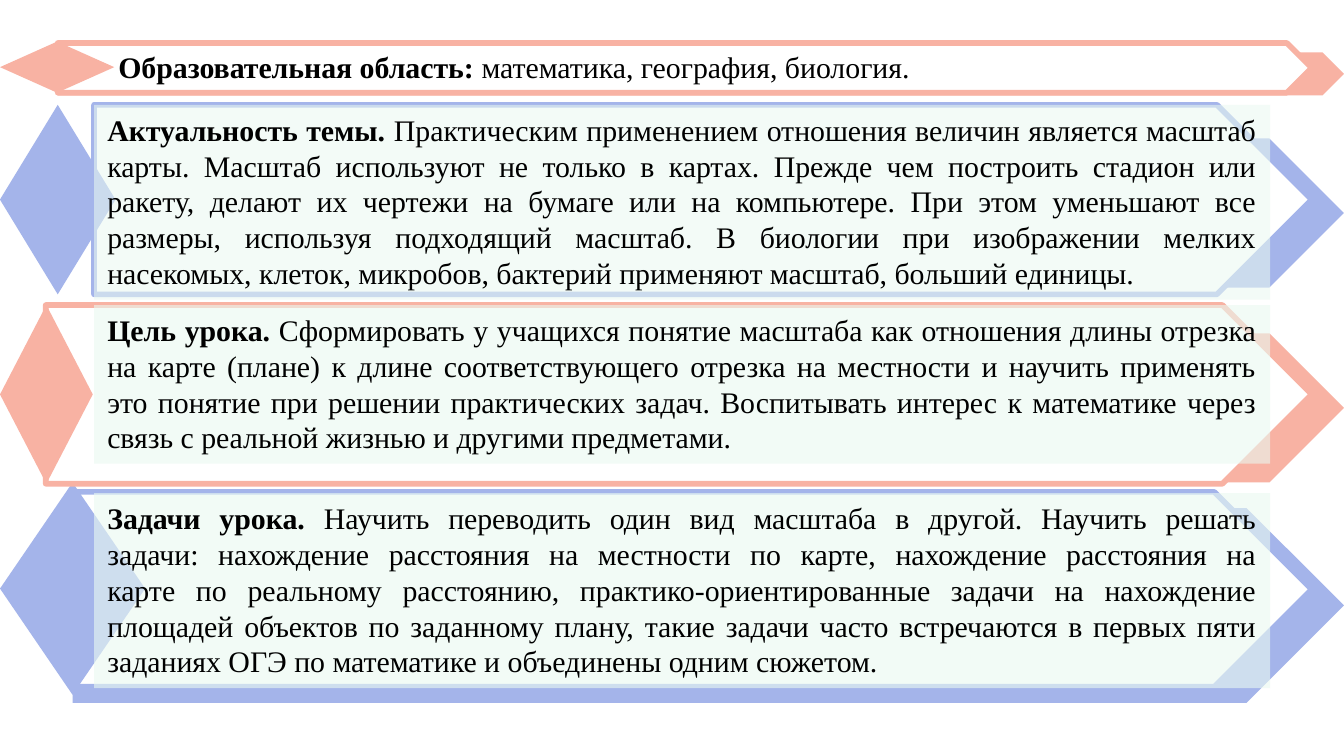
from dataclasses import dataclass

from pptx import Presentation
from pptx import util as u
from pptx.dml.color import RGBColor
from pptx.enum import shapes, text
from pptx.oxml.ns import qn
from lxml import etree

WHITE = RGBColor(0xFF, 0xFF, 0xFF)
BLACK = RGBColor(0x00, 0x00, 0x00)
BLUE = RGBColor(0xA4, 0xB4, 0xEA)
CORAL = RGBColor(0xF8, 0xB2, 0xA3)
MINT = RGBColor(0xEA, 0xF9, 0xF1)

FONT = "Times New Roman"
FONT_SIZE = u.Pt(16)
WIDTH, HEIGHT = u.Inches(10), u.Inches(5.625)
FRONT_TIP = 97.6  # right end of the outlined arrows, % of the width


@dataclass
class Box:
    """A rectangle in percent of the slide's width and height."""
    left: float
    top: float
    width: float
    height: float

    def lengths(self) -> tuple:
        return (int(WIDTH * self.left / 100), int(HEIGHT * self.top / 100),
                int(WIDTH * self.width / 100), int(HEIGHT * self.height / 100))


@dataclass
class Band:
    """A diamond and two arrows; each pair is (top, height) in percent."""
    color: RGBColor
    left: float
    back: tuple
    front: tuple
    diamond_width: float
    diamond: tuple


@dataclass
class Panel:
    top: float
    height: float
    opacity: int
    heading: str
    body: str


BANDS = [
    Band(BLUE, 5.4, (67.2, 25.78), (65.07, 25.78), 10.8, (63.82, 28.09)),
    Band(CORAL, 3.4, (44.09, 19.73), (40.36, 23.64), 6.9, (40.36, 23.64)),
    Band(CORAL, 4.3, (6.93, 5.69), (5.69, 6.58), 8.5, (5.51, 6.76)),
    Band(BLUE, 7, (18.31, 19.73), (13.87, 25.07), 8.6, (13.87, 25.07)),
]

TITLE_BOX = Box(7.8, 5.51, 78.4, 6.58)

# \v marks a line break inside a paragraph
PANELS = [
    Panel(13.87, 25.78, 57, "Актуальность темы.",
          " Практическим применением отношения величин является масштаб "
          "карты. Масштаб используют не только в картах. Прежде чем "
          "построить стадион или\vракету, делают их чертежи на бумаге или "
          "на компьютере. При этом уменьшают все\vразмеры, используя "
          "подходящий масштаб. В биологии при изображении мелких\vнасекомых, "
          "клеток, микробов, бактерий применяют масштаб, больший единицы."),
    Panel(40.36, 20.98, 60, "Цель урока.",
          " Сформировать у учащихся понятие масштаба как отношения длины "
          "отрезка на карте (плане) к длине соответствующего отрезка на "
          "местности и научить применять\vэто понятие при решении "
          "практических задач. Воспитывать интерес к математике через\v"
          "связь с реальной жизнью и другими предметами."),
    Panel(65.24, 25.78, 61, "Задачи урока.",
          " Научить переводить один вид масштаба в другой. Научить решать\v"
          "задачи: нахождение расстояния на местности по карте, нахождение "
          "расстояния на\vкарте по реальному расстоянию, "
          "практико-ориентированные задачи на нахождение\vплощадей объектов "
          "по заданному плану, такие задачи часто встречаются в первых пяти "
          "заданиях ОГЭ по математике и объединены одним сюжетом."),
]


def add_filled(slide, kind, box: Box, fill: RGBColor, line=None):
    shape = slide.shapes.add_shape(kind, *box.lengths())
    shape.shadow.inherit = False
    shape.fill.solid()
    shape.fill.fore_color.rgb = fill
    if line is None:
        shape.line.fill.background()
    else:
        shape.line.color.rgb = line
        shape.line.width = u.Pt(3)
    return shape


def add_band(slide, band: Band) -> None:
    arrow = shapes.MSO_SHAPE.PENTAGON
    add_filled(slide, arrow, Box(band.left, band.back[0], 100 - band.left, band.back[1]),
               band.color)
    add_filled(slide, arrow,
               Box(band.left, band.front[0], FRONT_TIP - band.left, band.front[1]),
               WHITE, band.color)
    add_filled(slide, shapes.MSO_SHAPE.DIAMOND,
               Box(0, band.diamond[0], band.diamond_width, band.diamond[1]), band.color)


def write_text(shape, heading: str, body: str, alignment, anchor) -> None:
    frame = shape.text_frame
    frame.word_wrap = True
    frame.auto_size = text.MSO_AUTO_SIZE.NONE
    frame.vertical_anchor = anchor
    frame.text = heading + body.split("\v")[0]
    paragraph = frame.paragraphs[0]
    paragraph.alignment = alignment
    paragraph.runs[0].text = heading
    for index, line in enumerate(body.split("\v")):
        if index:
            paragraph.add_line_break()
        paragraph.add_run().text = line
    for index, run in enumerate(paragraph.runs):
        run.font.name = FONT
        run.font.size = FONT_SIZE
        run.font.bold = index == 0
        run.font.color.rgb = BLACK


def add_panel(slide, panel: Panel) -> None:
    shape = add_filled(slide, shapes.MSO_SHAPE.RECTANGLE,
                       Box(7, panel.top, 87.5, panel.height), MINT)
    color = shape._element.spPr.find(qn("a:solidFill"))[0]
    etree.SubElement(color, qn("a:alpha")).set("val", str(panel.opacity * 1000))
    write_text(shape, panel.heading, panel.body,
               text.PP_ALIGN.JUSTIFY, text.MSO_ANCHOR.TOP)


def main() -> None:
    presentation = Presentation()
    presentation.slide_width, presentation.slide_height = WIDTH, HEIGHT
    slide = presentation.slides.add_slide(presentation.slide_layouts[5])

    # Arrow bands
    for band in BANDS:
        add_band(slide, band)

    # Title, brought in front of the bands
    title = slide.shapes.title
    title.left, title.top, title.width, title.height = TITLE_BOX.lengths()
    write_text(title, "Образовательная область:", " математика, география, биология.",
               text.PP_ALIGN.LEFT, text.MSO_ANCHOR.TOP)
    slide.shapes._spTree.append(title._element)

    # Text panels
    for panel in PANELS:
        add_panel(slide, panel)

    presentation.save("out.pptx")


if __name__ == "__main__":
    main()
